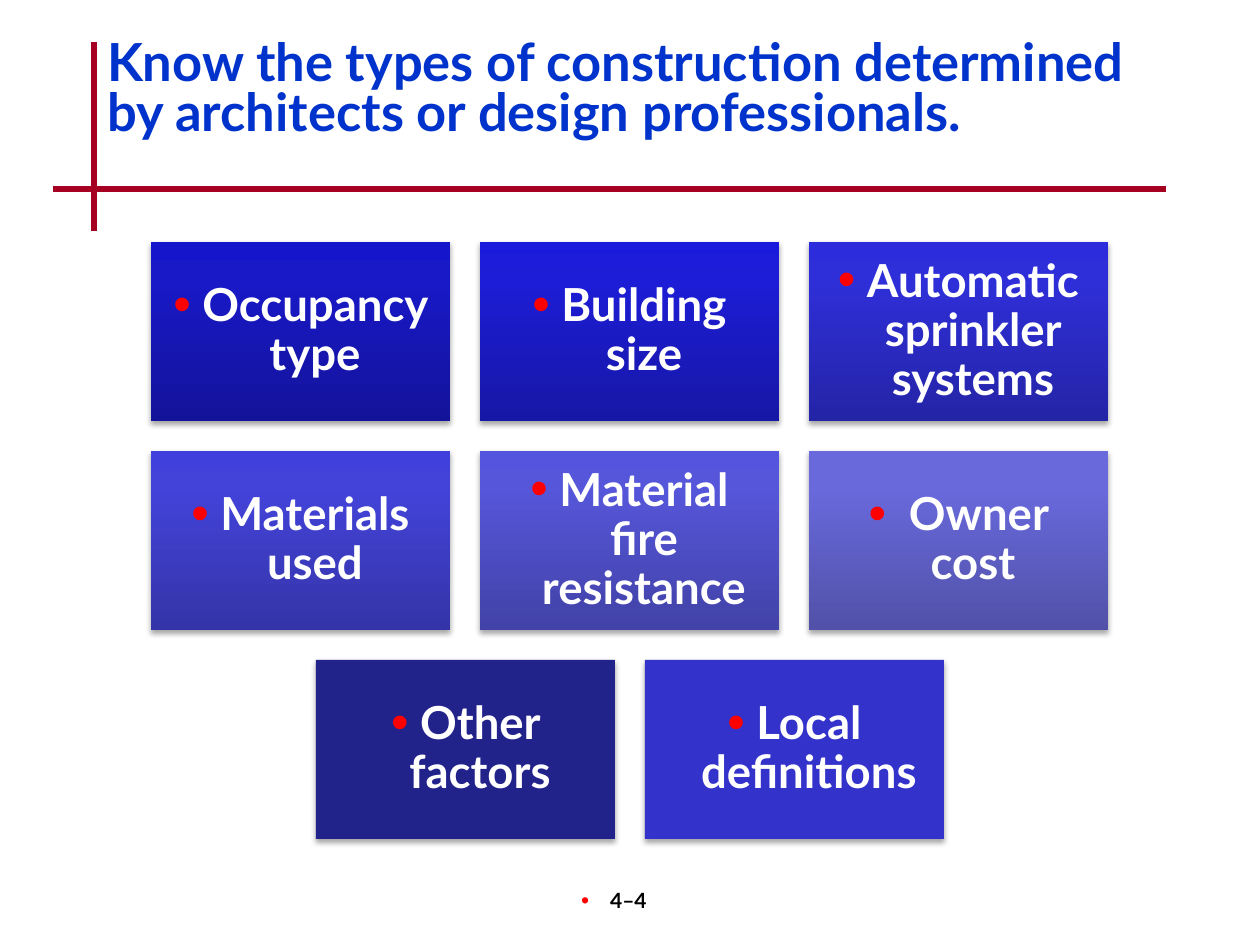
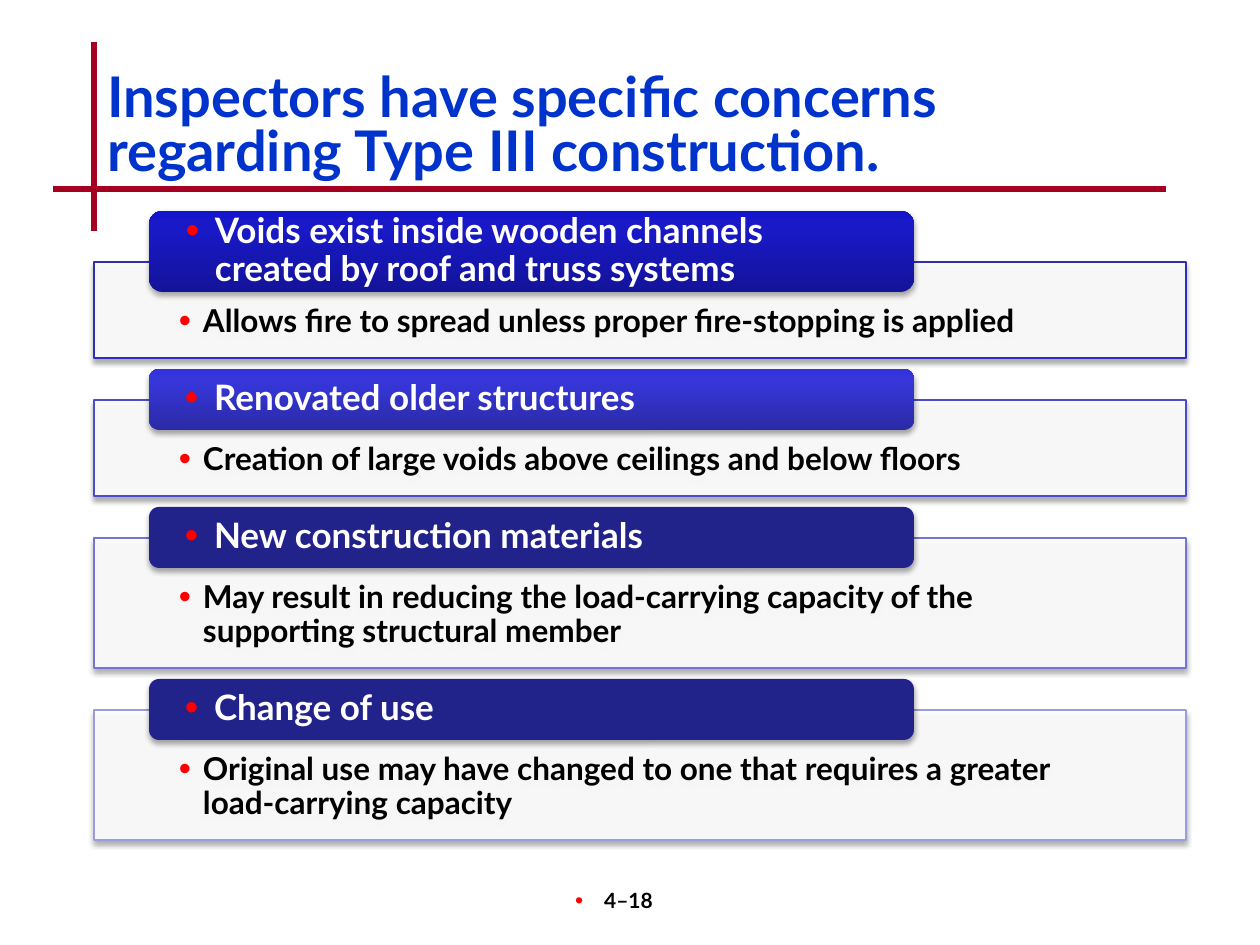
"""Build two slides on construction types and Type III inspection concerns."""
from dataclasses import dataclass

from lxml import etree
from pptx import Presentation
from pptx.dml.color import RGBColor
from pptx.enum.shapes import MSO_CONNECTOR, MSO_SHAPE
from pptx.enum.text import MSO_ANCHOR, PP_ALIGN
from pptx.oxml.ns import qn
from pptx.util import Emu, Pt

RECTANGLE = MSO_SHAPE.RECTANGLE
ROUNDED = MSO_SHAPE.ROUNDED_RECTANGLE
STRAIGHT = MSO_CONNECTOR.STRAIGHT
LEFT, CENTER = PP_ALIGN.LEFT, PP_ALIGN.CENTER
TOP, MIDDLE = MSO_ANCHOR.TOP, MSO_ANCHOR.MIDDLE

PX_PER_INCH = 126
SLIDE_WIDTH, SLIDE_HEIGHT = 1260, 945
FONT = "Lato"
BULLET_INDENT = 29

BLACK = RGBColor(0x00, 0x00, 0x00)
WHITE = RGBColor(0xFF, 0xFF, 0xFF)
RULE_RED = RGBColor(0xA5, 0x00, 0x21)
BULLET_RED = RGBColor(0xFF, 0x00, 0x00)
TITLE_BLUE = RGBColor(0x00, 0x33, 0xCC)
NAVY = RGBColor(0x22, 0x22, 0x8B)
ROYAL = RGBColor(0x33, 0x33, 0xCC)

Fill = tuple[RGBColor, ...]


def colors(*codes: str) -> Fill:
    """Turn hex codes into colours; three of them make a gradient."""
    return tuple(RGBColor.from_string(code) for code in codes)


DEEP_BLUE = colors("13139A", "1919C8", "1515CC")
GRADIENT_POSITIONS = (0, 80, 100)


@dataclass(frozen=True)
class Box:
    """Place and size in px."""
    left: int
    top: int
    width: int
    height: int

    def emu(self) -> tuple[Emu, Emu, Emu, Emu]:
        """Return the four lengths in EMU."""
        return px(self.left), px(self.top), px(self.width), px(self.height)


@dataclass(frozen=True)
class Card:
    """A factor that determines the construction type."""
    text: str
    fill: Fill


@dataclass(frozen=True)
class Concern:
    """A heading tab over a panel with its detail."""
    heading: str
    heading_height: int
    fill: Fill
    detail: str
    panel_height: int
    outline: RGBColor


CARD_ROWS = (
    (
        Card("Occupancy type", DEEP_BLUE),
        Card("Building size", colors("1717A6", "1D1DD7", "1A1ADC")),
        Card("Automatic sprinkler systems", colors("2424A7", "2F2FD9", "2C2CDD")),
    ),
    (
        Card("Materials used", colors("3434A8", "4343DA", "4040DD")),
        Card("Material fire resistance", colors("4242A8", "5656DA", "5454DE")),
        Card(" Owner cost", colors("5151A9", "6969DC", "6767DF")),
    ),
    (
        Card("Other factors", (NAVY,)),
        Card("Local definitions", (ROYAL,)),
    ),
)
CARD_WIDTH, CARD_HEIGHT, CARD_GAP, CARDS_TOP = 299, 179, 30, 242

CONCERNS = (
    Concern("Voids exist inside wooden channels created by roof and truss systems",
            81, DEEP_BLUE,
            "Allows fire to spread unless proper fire-stopping is applied",
            96, RGBColor(0x2E, 0x2E, 0xB9)),
    Concern("Renovated older structures",
            61, colors("2A2AA7", "3636D9", "3333DD"),
            "Creation of large voids above ceilings and below floors",
            96, RGBColor(0x4B, 0x4B, 0xCD)),
    Concern("New construction materials",
            61, (NAVY,),
            "May result in reducing the load-carrying capacity of the "
            "supporting structural member",
            130, RGBColor(0x74, 0x74, 0xD4)),
    Concern("Change of use",
            61, (NAVY,),
            "Original use may have changed to one that requires a greater "
            "load-carrying capacity",
            130, RGBColor(0x9C, 0x9C, 0xDD)),
)
CONCERNS_TOP, CONCERN_GAP, TAB_OVERLAP = 211, 11, 30


def px(length: int) -> Emu:
    """Turn px into EMU."""
    return Emu(round(length * 914400 / PX_PER_INCH))


def add_element(parent, tag: str, **attributes):
    """Append a drawing element with its attributes."""
    values = {name: str(value) for name, value in attributes.items()}
    return etree.SubElement(parent, qn(f"a:{tag}"), values)


def add_bullet(paragraph, indent: int) -> None:
    """Give a paragraph a red hanging bullet."""
    properties = paragraph._p.get_or_add_pPr()
    properties.set("marL", str(px(indent)))
    properties.set("indent", str(-px(indent)))
    add_element(add_element(properties, "buClr"), "srgbClr", val=BULLET_RED)
    add_element(properties, "buSzPct", val=110000)
    add_element(properties, "buFont", typeface="Arial")
    add_element(properties, "buChar", char="•")


def write_text(shape, text: str, *, size: int, color: RGBColor,
               align=LEFT, anchor=TOP, spacing: float = 1.0, indent: int = 0,
               insets: tuple[int, int, int, int] = (13, 6, 13, 6)) -> None:
    """Write one bold paragraph; an indent gives it a bullet."""
    frame = shape.text_frame
    frame.word_wrap = True
    frame.vertical_anchor = anchor
    (frame.margin_left, frame.margin_top,
     frame.margin_right, frame.margin_bottom) = map(px, insets)
    paragraph = frame.paragraphs[0]
    paragraph.alignment = align
    paragraph.line_spacing = spacing
    if indent:
        add_bullet(paragraph, indent)
    run = paragraph.add_run()
    run.text = text
    run.font.name = FONT
    run.font.size = Pt(size)
    run.font.bold = True
    run.font.color.rgb = color


def paint(shape, fill: Fill) -> None:
    """Fill a shape with one colour or a gradient from the bottom up."""
    if len(fill) == 1:
        shape.fill.solid()
        shape.fill.fore_color.rgb = fill[0]
        return
    shape.fill.gradient()
    shape.fill.gradient_angle = 90
    stops = shape._element.spPr.find(qn("a:gradFill")).find(qn("a:gsLst"))
    for stop in list(stops):
        stops.remove(stop)
    for position, color in zip(GRADIENT_POSITIONS, fill):
        stop = add_element(stops, "gs", pos=position * 1000)
        add_element(stop, "srgbClr", val=color)


def add_block(slide, kind, box: Box, fill: Fill, outline: RGBColor | None = None):
    """Draw a filled shape with a soft shadow below it."""
    shape = slide.shapes.add_shape(kind, *box.emu())
    paint(shape, fill)
    if outline is None:
        shape.line.fill.background()
    else:
        shape.line.color.rgb = outline
        shape.line.width = Pt(0.75)
    shape.shadow.inherit = False
    effects = shape._element.spPr.find(qn("a:effectLst"))
    shadow = add_element(effects, "outerShdw", blurRad=Pt(3.1), dist=Pt(1.8),
                         dir=5400000, rotWithShape=0)
    add_element(add_element(shadow, "srgbClr", val=BLACK), "alpha", val=35000)
    return shape


def add_rule(slide, start: tuple[int, int], end: tuple[int, int]) -> None:
    """Draw a red rule."""
    rule = slide.shapes.add_connector(STRAIGHT, *map(px, start + end))
    rule.line.color.rgb = RULE_RED
    rule.line.width = Pt(3)
    add_element(rule._element.spPr, "effectLst")


def add_base_slide(presentation, title: str, title_top: int, title_size: int,
                   number: str):
    """Add a slide with crossed rules, title and page number."""
    slide = presentation.slides.add_slide(presentation.slide_layouts[6])
    add_rule(slide, (94, 42), (94, 231))
    add_rule(slide, (53, 189), (1166, 189))
    footer = slide.shapes.add_textbox(*Box(494, 882, 262, 63).emu())
    write_text(footer, number, size=12, color=BLACK, align=CENTER,
               indent=BULLET_INDENT, insets=(13, 6, 35, 6))
    heading = slide.shapes.add_textbox(*Box(94, title_top, 1092, 116).emu())
    write_text(heading, title, size=title_size, color=TITLE_BLUE, spacing=0.8)
    return slide


def add_cards(slide) -> None:
    """Draw the rows of cards, each row centred on the slide."""
    for row_index, row in enumerate(CARD_ROWS):
        row_width = len(row) * (CARD_WIDTH + CARD_GAP) - CARD_GAP
        row_left = (SLIDE_WIDTH - row_width) // 2
        top = CARDS_TOP + row_index * (CARD_HEIGHT + CARD_GAP)
        for column, card in enumerate(row):
            left = row_left + column * (CARD_WIDTH + CARD_GAP)
            box = Box(left, top, CARD_WIDTH, CARD_HEIGHT)
            shape = add_block(slide, RECTANGLE, box, card.fill)
            write_text(shape, card.text, size=26, color=WHITE, align=CENTER,
                       anchor=MIDDLE, spacing=0.9, indent=BULLET_INDENT,
                       insets=(14, 14, 14, 14))


def add_concerns(slide) -> None:
    """Stack the panels, each with its heading tab on the upper edge."""
    top = CONCERNS_TOP
    for concern in CONCERNS:
        panel_top = top + concern.heading_height - TAB_OVERLAP
        panel = add_block(slide, RECTANGLE,
                          Box(94, panel_top, 1092, concern.panel_height),
                          (WHITE,), concern.outline)
        color = panel._element.spPr.find(qn("a:solidFill"))[0]
        add_element(color, "alpha", val=90000)
        write_text(panel, concern.detail, size=18, color=BLACK, spacing=0.9,
                   indent=24, insets=(85, 43, 85, 18))
        tab = add_block(slide, ROUNDED,
                        Box(149, top, 765, concern.heading_height), concern.fill)
        write_text(tab, concern.heading, size=20, color=WHITE, anchor=MIDDLE,
                   spacing=0.9, indent=BULLET_INDENT, insets=(33, 0, 33, 0))
        top = panel_top + concern.panel_height + CONCERN_GAP


def main() -> None:
    """Build and save the presentation."""
    presentation = Presentation()
    presentation.slide_width = px(SLIDE_WIDTH)
    presentation.slide_height = px(SLIDE_HEIGHT)
    add_cards(add_base_slide(
        presentation,
        "Know the types of construction determined by architects or design "
        "professionals.", 35, 30, "4–4"))
    add_concerns(add_base_slide(
        presentation,
        "Inspectors have specific concerns regarding Type III construction.",
        69, 32, "4–18"))
    presentation.save("out.pptx")


if __name__ == "__main__":
    main()
